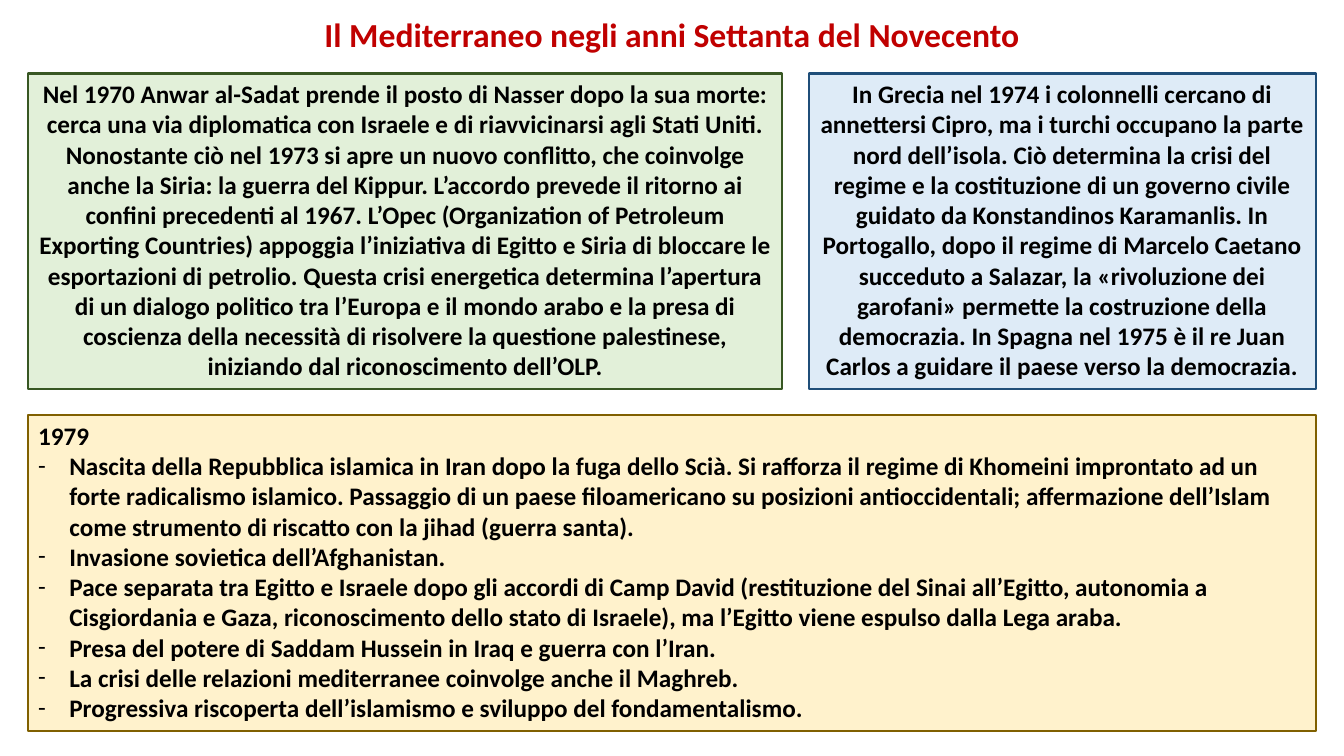
from lxml.etree import SubElement
from pptx import Presentation
from pptx.dml.color import RGBColor
from pptx.enum.shapes import MSO_SHAPE
from pptx.enum.text import MSO_ANCHOR, PP_ALIGN
from pptx.oxml.ns import qn
from pptx.util import Inches, Pt

WIDTH, HEIGHT = 13.33, 7.5
MARGIN, GAP = 0.28, 0.26
TOP, ROW_HEIGHT = 0.73, 3.13
CONTENT_WIDTH = WIDTH - 2 * MARGIN
EGYPT_WIDTH = 7.48
INDENT = 0.31
FONT = "Calibri"

COLORS = {
    "title": "C00000",
    "text": "000000",
    "green": "E2F0D9",
    "green_line": "385723",
    "blue": "DEEBF7",
    "blue_line": "1F4E79",
    "yellow": "FFF2CC",
    "yellow_line": "806000",
}

TITLE = "Il Mediterraneo negli anni Settanta del Novecento"

EGYPT = (
    "Nel 1970 Anwar al-Sadat prende il posto di Nasser dopo la sua morte: cerca una via "
    "diplomatica con Israele e di riavvicinarsi agli Stati Uniti. Nonostante ciò nel 1973 si "
    "apre un nuovo conflitto, che coinvolge anche la Siria: la guerra del Kippur. L’accordo "
    "prevede il ritorno ai confini precedenti al 1967. L’Opec (Organization of Petroleum "
    "Exporting Countries) appoggia l’iniziativa di Egitto e Siria di bloccare le esportazioni "
    "di petrolio. Questa crisi energetica determina l’apertura di un dialogo politico tra "
    "l’Europa e il mondo arabo e la presa di coscienza della necessità di risolvere la "
    "questione palestinese, iniziando dal riconoscimento dell’OLP."
)

SOUTHERN_EUROPE = (
    "In Grecia nel 1974 i colonnelli cercano di annettersi Cipro, ma i turchi occupano la "
    "parte nord dell’isola. Ciò determina la crisi del regime e la costituzione di un governo "
    "civile guidato da Konstandinos Karamanlis. In Portogallo, dopo il regime di Marcelo "
    "Caetano succeduto a Salazar, la «rivoluzione dei garofani» permette la costruzione della "
    "democrazia. In Spagna nel 1975 è il re Juan Carlos a guidare il paese verso la democrazia."
)

EVENTS_YEAR = "1979"
EVENTS = [
    "Nascita della Repubblica islamica in Iran dopo la fuga dello Scià. Si rafforza il regime "
    "di Khomeini improntato ad un forte radicalismo islamico. Passaggio di un paese "
    "filoamericano su posizioni antioccidentali; affermazione dell’Islam come strumento di "
    "riscatto con la jihad (guerra santa).",
    "Invasione sovietica dell’Afghanistan.",
    "Pace separata tra Egitto e Israele dopo gli accordi di Camp David (restituzione del Sinai "
    "all’Egitto, autonomia a Cisgiordania e Gaza, riconoscimento dello stato di Israele), ma "
    "l’Egitto viene espulso dalla Lega araba.",
    "Presa del potere di Saddam Hussein in Iraq e guerra con l’Iran.",
    "La crisi delle relazioni mediterranee coinvolge anche il Maghreb.",
    "Progressiva riscoperta dell’islamismo e sviluppo del fondamentalismo.",
]


def color(name):
    """Return the named colour of the palette."""
    return RGBColor.from_string(COLORS[name])


def style_text(text_frame, size, color_name, alignment):
    """Format every paragraph and run of a text frame."""
    for paragraph in text_frame.paragraphs:
        paragraph.alignment = alignment
        for run in paragraph.runs:
            run.font.name = FONT
            run.font.size = Pt(size)
            run.font.bold = True
            run.font.color.rgb = color(color_name)


def add_dash(paragraph):
    """Give a paragraph a dash bullet with a hanging indent."""
    properties = paragraph._p.get_or_add_pPr()
    properties.set("marL", str(Inches(INDENT)))
    properties.set("indent", str(-Inches(INDENT)))
    SubElement(properties, qn("a:buFont"), typeface=FONT)
    SubElement(properties, qn("a:buChar"), char="-")


def add_title(slide, left, top, width, height):
    """Write the slide title centred in its box."""
    box = slide.shapes.add_textbox(*map(Inches, (left, top, width, height)))
    box.text_frame.text = TITLE
    box.text_frame.word_wrap = False
    style_text(box.text_frame, 24, "title", PP_ALIGN.CENTER)


def add_panel(slide, left, top, width, texts, theme, alignment):
    """Draw a framed panel with one paragraph per text and return its text frame."""
    panel = slide.shapes.add_shape(
        MSO_SHAPE.RECTANGLE, *map(Inches, (left, top, width, ROW_HEIGHT))
    )
    panel.shadow.inherit = False
    panel.fill.solid()
    panel.fill.fore_color.rgb = color(theme)
    panel.line.color.rgb = color(f"{theme}_line")
    panel.line.width = Pt(1.5)
    text_frame = panel.text_frame
    text_frame.word_wrap = True
    text_frame.vertical_anchor = MSO_ANCHOR.TOP
    text_frame.text = "\n".join(texts)
    style_text(text_frame, 18, "text", alignment)
    return text_frame


def add_events(slide, left, top, width):
    """Draw the panel that lists the events of the year."""
    texts = [EVENTS_YEAR, *EVENTS]
    text_frame = add_panel(slide, left, top, width, texts, "yellow", PP_ALIGN.LEFT)
    for paragraph in text_frame.paragraphs[1:]:
        add_dash(paragraph)


def main():
    """Build the slide and save the presentation."""
    presentation = Presentation()
    presentation.slide_width = Inches(WIDTH)
    presentation.slide_height = Inches(HEIGHT)
    slide = presentation.slides.add_slide(presentation.slide_layouts[6])

    title_width = 7.17
    europe_left = MARGIN + EGYPT_WIDTH + GAP
    europe_width = CONTENT_WIDTH - EGYPT_WIDTH - GAP
    add_title(slide, (WIDTH - title_width) / 2, 0.09, title_width, 0.5)
    add_panel(slide, MARGIN, TOP, EGYPT_WIDTH, [EGYPT], "green", PP_ALIGN.CENTER)
    add_panel(slide, europe_left, TOP, europe_width, [SOUTHERN_EUROPE], "blue", PP_ALIGN.CENTER)
    add_events(slide, MARGIN, TOP + ROW_HEIGHT + GAP, CONTENT_WIDTH)
    presentation.save("out.pptx")


if __name__ == "__main__":
    main()
